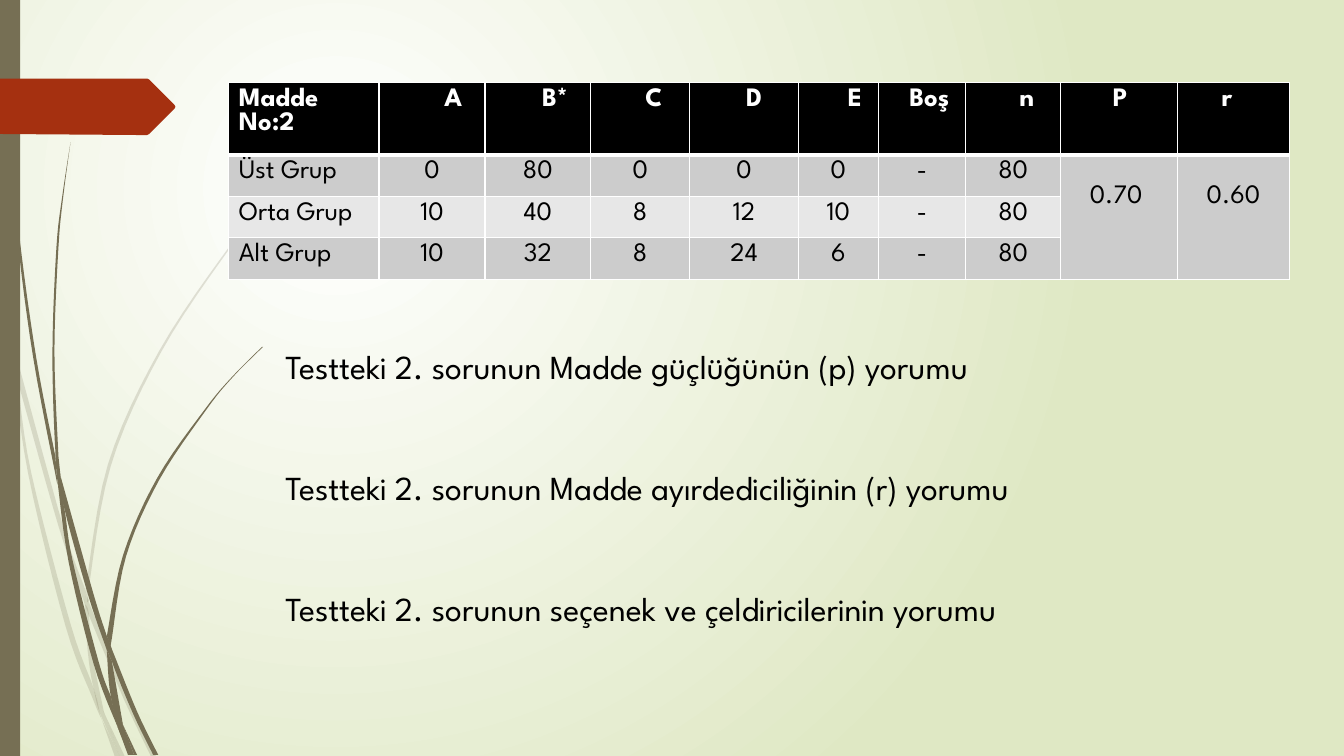
from dataclasses import dataclass

from lxml import etree
from pptx import Presentation
from pptx.dml.color import RGBColor
from pptx.enum import lang, shapes, text
from pptx.oxml.ns import qn
from pptx.util import Inches, Pt


@dataclass(frozen=True)
class Theme:
    font: str = "League Spartan"
    table_size: int = 19
    comment_size: int = 24
    white: str = "FFFFFF"
    black: str = "000000"
    backdrop: str = "DFE8C4"
    olive: str = "766F54"
    rust: str = "A53010"
    bands: tuple = ("CCCCCC", "E7E7E7")


THEME = Theme()

HEADINGS = [("Madde No:2", 0), ("A", 0.42), ("B*", 0.34), ("C", 0.27), ("D", 0.2),
            ("E", 0.33), ("Boş", 0.14), ("n", 0.27), ("P", 0.42), ("r", 0.34)]
GROUPS = [
    ("Üst Grup", "0", "80", "0", "0", "0", "-", "80"),
    ("Orta Grup", "10", "40", "8", "12", "10", "-", "80"),
    ("Alt Grup", "10", "32", "8", "24", "6", "-", "80"),
]
INDICES = {8: "0.70", 9: "0.60"}
COLUMN_WIDTHS = [1.49, 1.05, 1.05, 0.98, 1.08, 0.79, 0.87, 0.94, 1.16, 1.11]
ROW_HEIGHTS = [0.72] + [0.41] * len(GROUPS)
COMMENTS = [
    "Testteki 2. sorunun Madde güçlüğünün (p) yorumu",
    "Testteki 2. sorunun Madde ayırdediciliğinin (r) yorumu",
    "Testteki 2. sorunun seçenek ve çeldiricilerinin yorumu",
]

PALE_BLADES = [
    ([(0.11, 3.5), (0.09, 3.22), (0, 2.82)], [(0, 2.99), (0.1, 3.44), (0.11, 3.5)]),
    ([(0.14, 3.45), (0.62, 5.2), (0.85, 5.86)],
     [(0.84, 5.99), (0.58, 5.22), (0.17, 3.76)]),
    ([(0.88, 5.96), (0.92, 6.07), (1.27, 6.92), (1.55, 7.51)],
     [(1.5, 7.51), (1.23, 6.94), (0.88, 6.1)]),
    ([(1.05, 7.11), (1.24, 7.51)], [(1.19, 7.51), (1.05, 7.11)]),
    ([(0.11, 3.5), (0.28, 4.7), (0.65, 6.21), (0.92, 6.93), (1.01, 7.14)],
     [(0.99, 7.07), (0.93, 6.83), (0.7, 6.19), (0.31, 4.69), (0.17, 3.76), (0.11, 3.5)]),
    ([(0.84, 5.99), (0.87, 6.46), (0.93, 6.83), (1.05, 7.11)],
     [(1.03, 7.06), (0.91, 6.46), (0.88, 6.08), (0.84, 5.99)]),
    ([(3.12, 1.53), (2.68, 1.97), (2.28, 2.44), (1.58, 3.48), (1.07, 4.61), (0.85, 5.84)],
     [(0.88, 5.96), (0.88, 5.84), (1.1, 4.62), (1.6, 3.49), (2.29, 2.45), (2.68, 1.98),
      (3.12, 1.54)]),
    ([(1.01, 7.14), (1.14, 7.51)], [(1.19, 7.51), (1.01, 7.14)]),
    ([(0.85, 5.86), (0.84, 5.99)], [(0.88, 6.1), (0.88, 5.96)]),
    ([(0.93, 6.83), (0.99, 7.07), (1.19, 7.51)], [(1.05, 7.11), (0.96, 6.92), (0.93, 6.83)]),
]
DARK_BLADES = [
    ([(0.03, 0), (0.07, 1.1), (0.17, 2.33), (0.33, 3.55), (0.57, 4.81)],
     [(0.55, 4.53), (0.36, 3.55), (0.19, 2.32), (0.08, 1.09), (0.04, 0)]),
    ([(0.6, 4.72), (0.64, 5.05), (0.88, 5.92), (1.06, 6.45)],
     [(1.06, 6.31), (0.93, 5.9), (0.6, 4.72)]),
    ([(1.1, 6.41), (1.11, 6.56), (1.32, 7.08), (1.52, 7.49)],
     [(1.57, 7.49), (1.36, 7.06), (1.13, 6.49), (1.1, 6.41)]),
    ([(0.57, 4.77), (0.68, 5.57), (0.93, 6.59), (1.17, 7.22)],
     [(1.1, 6.91), (0.98, 6.57), (0.72, 5.56), (0.64, 5.05), (0.57, 4.77)]),
    ([(0.7, 1.41), (0.62, 1.93), (0.56, 2.45), (0.52, 3.49), (0.55, 4.49), (0.6, 4.72)],
     [(0.58, 4.53), (0.54, 3.49), (0.58, 2.45), (0.63, 1.93), (0.7, 1.41)]),
    ([(1.22, 7.19), (1.33, 7.49)], [(1.36, 7.49), (1.22, 7.19)]),
    ([(0.55, 4.49), (0.57, 4.77), (0.64, 5.05)], [(0.6, 4.72), (0.55, 4.49)]),
    ([(2.6, 3.44), (2.31, 3.73), (2.04, 4.05), (1.56, 4.74), (1.22, 5.51), (1.06, 6.31)],
     [(1.1, 6.41), (1.11, 6.33), (1.25, 5.52), (1.58, 4.76), (2.05, 4.06), (2.31, 3.74),
      (2.61, 3.44)]),
    ([(1.17, 7.22), (1.27, 7.49)], [(1.31, 7.49), (1.17, 7.22)]),
    ([(1.06, 6.45), (1.1, 6.91), (1.22, 7.19)], [(1.11, 6.56), (1.06, 6.45)]),
    ([(1.06, 6.31), (1.06, 6.45)], [(1.11, 6.56), (1.1, 6.41), (1.06, 6.31)]),
    ([(1.1, 6.91), (1.17, 7.22), (1.3, 7.49)], [(1.33, 7.49), (1.22, 7.19), (1.1, 6.91)]),
]
BANNER = [(0, 0.78), (1.46, 0.78), (1.48, 0.79), (1.73, 1.04), (1.74, 1.06),
          (1.73, 1.08), (1.48, 1.33), (1.46, 1.34), (1.36, 1.34), (0, 1.33)]


def paint(shape, color, opacity=100):
    shape.shadow.inherit = False
    shape.fill.solid()
    shape.fill.fore_color.rgb = RGBColor.from_string(color)
    shape.line.fill.background()
    if opacity < 100:
        tint = shape.element.spPr.find(".//" + qn("a:srgbClr"))
        etree.SubElement(tint, qn("a:alpha"), val=str(opacity * 1000))


def smooth(anchors, steps=6):
    padded = [anchors[0], *anchors, anchors[-1]]
    curve = []
    for quad in zip(padded, padded[1:], padded[2:], padded[3:]):
        for t in (step / steps for step in range(steps)):
            curve.append(tuple(
                b + ((c - a) * t + (2 * a - 5 * b + 4 * c - d) * t ** 2
                     + (3 * b - a - 3 * c + d) * t ** 3) / 2
                for a, b, c, d in zip(*quad)))
    return curve + [anchors[-1]]


def draw_outline(slide, points, color, opacity=100):
    corners = [(Inches(x), Inches(y)) for x, y in points]
    builder = slide.shapes.build_freeform(*corners[0])
    builder.add_line_segments(corners[1:], close=True)
    paint(builder.convert_to_shape(), color, opacity)


def set_backdrop(slide):
    fill = slide.background.fill
    fill.gradient()
    for stop, color, position in zip(fill.gradient_stops, (THEME.white, THEME.backdrop), (0, 1)):
        stop.color.rgb = RGBColor.from_string(color)
        stop.position = position
    gradient = slide.element.find(".//" + qn("a:gradFill"))
    gradient.remove(gradient.find(qn("a:lin")))
    circle = etree.SubElement(gradient, qn("a:path"), path="circle")
    etree.SubElement(circle, qn("a:fillToRect"), l="50000", t="50000", r="100000", b="100000")


def format_text(paragraph, size, color, bold=False):
    font = paragraph.font
    font.name, font.size, font.bold = THEME.font, Pt(size), bold
    font.color.rgb = RGBColor.from_string(color)
    for run in paragraph.runs:
        run.font.language_id = lang.MSO_LANGUAGE_ID.TURKISH


def set_borders(cell, bottom):
    properties = cell._tc.get_or_add_tcPr()
    for place, (side, width) in enumerate([("L", 1), ("R", 1), ("T", 1), ("B", bottom)]):
        line = etree.Element(qn("a:ln" + side), w=str(Pt(width)))
        etree.SubElement(etree.SubElement(line, qn("a:solidFill")), qn("a:srgbClr"), val=THEME.white)
        properties.insert(place, line)


def add_item_table(slide):
    table = slide.shapes.add_table(
        len(ROW_HEIGHTS), len(COLUMN_WIDTHS), Inches(2.27), Inches(0.82),
        Inches(sum(COLUMN_WIDTHS)), Inches(sum(ROW_HEIGHTS))).table
    for column, width in zip(table.columns, COLUMN_WIDTHS):
        column.width = Inches(width)
    for row, height in zip(table.rows, ROW_HEIGHTS):
        row.height = Inches(height)
    for index in INDICES:
        table.cell(1, index).merge(table.cell(len(GROUPS), index))
    for r in range(len(ROW_HEIGHTS)):
        header = r == 0
        for c, (heading, indent) in enumerate(HEADINGS):
            cell = table.cell(r, c)
            cell.fill.solid()
            shade = THEME.black if header else THEME.bands[0 if c in INDICES else (r - 1) % 2]
            cell.fill.fore_color.rgb = RGBColor.from_string(shade)
            set_borders(cell, 3 if header else 1)
            if cell.is_spanned:
                continue
            if header:
                cell.text = heading
                cell.margin_left = Inches(0.1 + indent)
            elif c in INDICES:
                cell.text = INDICES[c]
                cell.margin_left = cell.margin_top = Inches(0.29)
            else:
                cell.text = GROUPS[r - 1][c]
            paragraph = cell.text_frame.paragraphs[0]
            format_text(paragraph, THEME.table_size, THEME.white if header else THEME.black, header)
            if c and c not in INDICES:
                paragraph.alignment = text.PP_ALIGN.CENTER


def fill_comments(body):
    body.left, body.top, body.width, body.height = map(Inches, (2.73, 3.38, 9.9, 3.33))
    frame = body.text_frame
    frame.text = "\n".join(COMMENTS)
    frame.auto_size = text.MSO_AUTO_SIZE.NONE
    frame.margin_top = Inches(0.05)
    for paragraph in frame.paragraphs:
        format_text(paragraph, THEME.comment_size, THEME.black)
        paragraph.space_before, paragraph.space_after = Pt(0), Pt(57.8)
        properties = paragraph._p.get_or_add_pPr()
        properties.set("marL", "0")
        properties.set("indent", "0")
        etree.SubElement(properties, qn("a:buNone"))
        properties.append(properties.find(qn("a:defRPr")))


def main():
    deck = Presentation()
    deck.slide_width, deck.slide_height = Inches(13.33), Inches(7.5)
    slide = deck.slides.add_slide(deck.slide_layouts[1])
    title, body = slide.placeholders
    title.element.getparent().remove(title.element)
    set_backdrop(slide)
    for blades, opacity in ((PALE_BLADES, 20), (DARK_BLADES, 100)):
        for down, up in blades:
            draw_outline(slide, smooth(down) + smooth(up), THEME.olive, opacity)
    edge = slide.shapes.add_shape(shapes.MSO_SHAPE.RECTANGLE, 0, 0, Inches(0.2), Inches(7.5))
    paint(edge, THEME.olive)
    draw_outline(slide, BANNER, THEME.rust)
    add_item_table(slide)
    fill_comments(body)
    deck.save("out.pptx")


if __name__ == "__main__":
    main()
